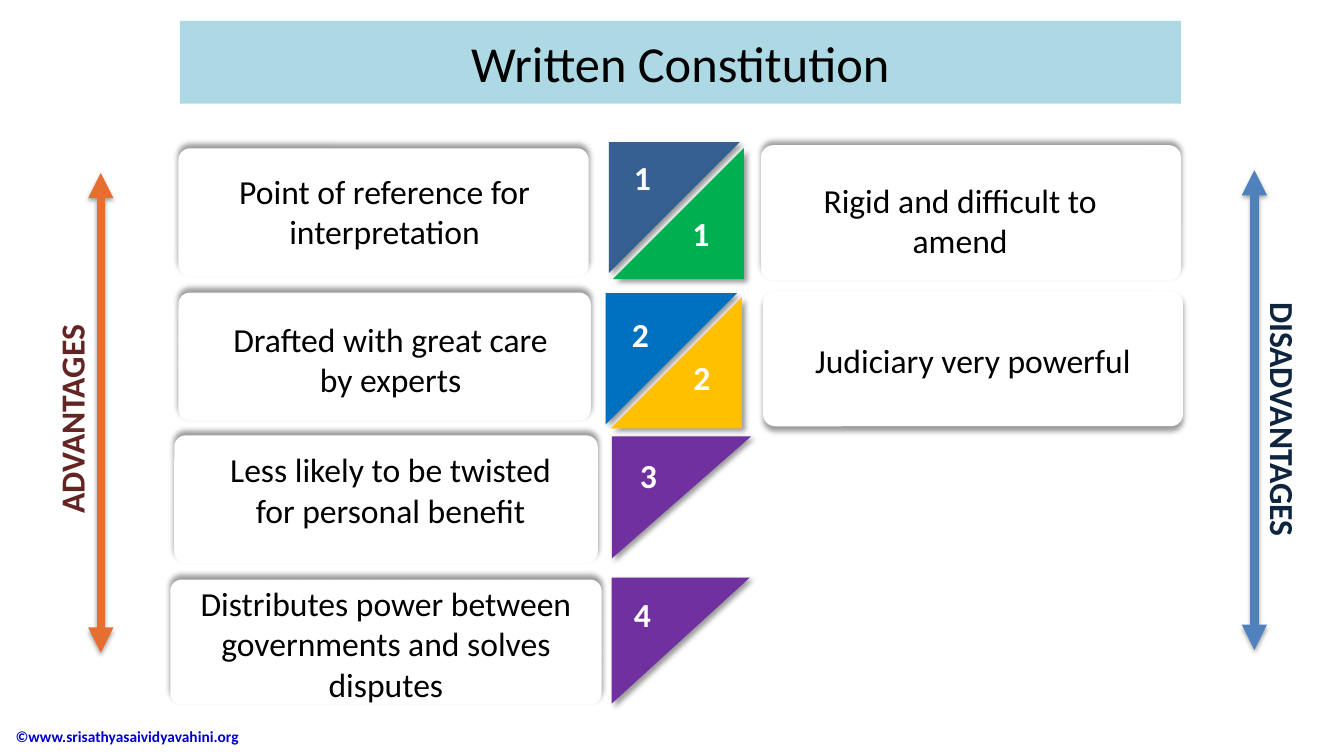
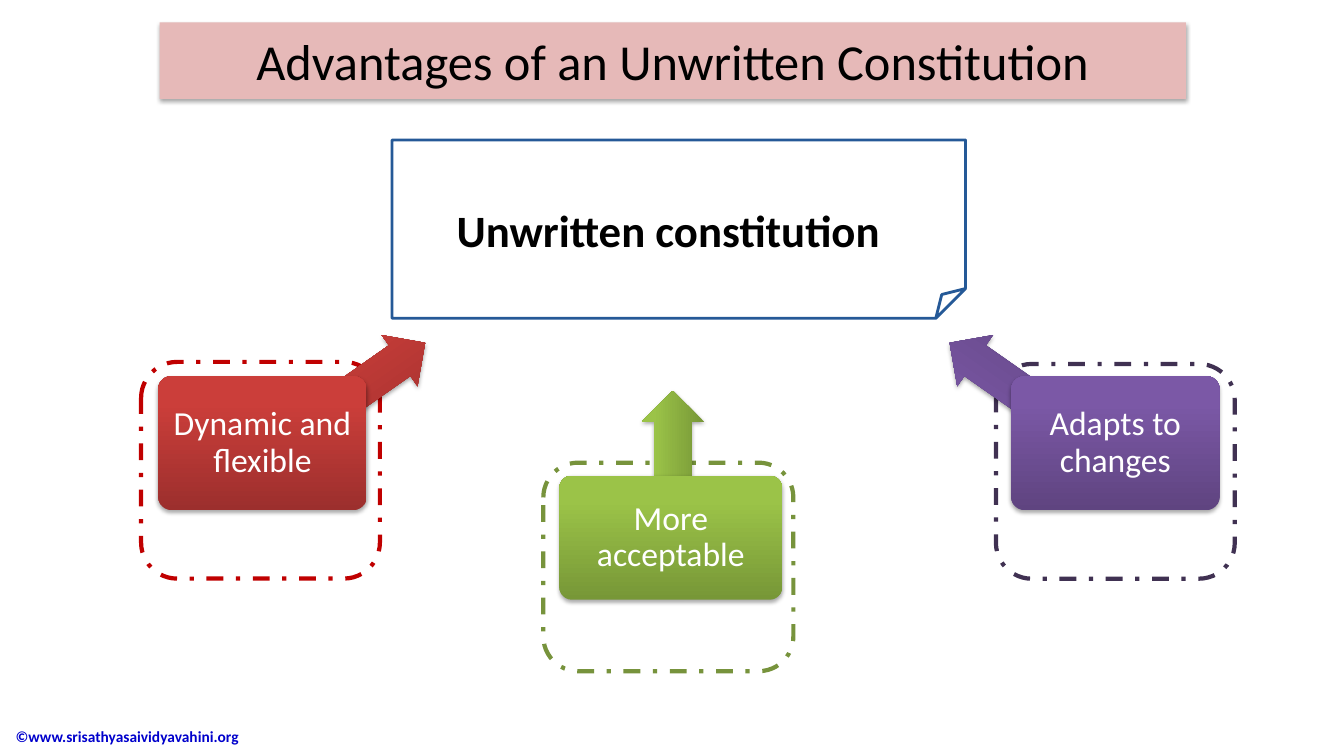
"""Build two slides on written and unwritten constitutions."""
from dataclasses import dataclass
from typing import Any, NamedTuple, Optional

from lxml.etree import SubElement
from pptx import Presentation
from pptx.dml.color import RGBColor
from pptx.enum.dml import MSO_LINE
from pptx.enum.shapes import MSO_CONNECTOR, MSO_SHAPE as Preset
from pptx.enum.text import MSO_ANCHOR as Anchor, PP_ALIGN as Align
from pptx.oxml.ns import qn
from pptx.util import Pt

FONT = "Calibri"
COLORS = {
    "black": "000000", "white": "FFFFFF", "footer": "0000CC",
    "title_blue": "ADD9E5", "title_pink": "E6B9B8",
    "navy": "376092", "green": "00B050", "blue": "0070C0",
    "amber": "FFC000", "purple": "7030A0",
    "advantage_text": "632523", "advantage_arrow": "E76E31",
    "disadvantage_text": "0F243E", "disadvantage_arrow": "4F81BD",
    "note_line": "255997",
    "red_line": "C00000", "red_dark": "9C2F2D", "red_light": "CB3E3A",
    "lime_line": "77933C", "lime_dark": "779737", "lime_light": "9BC348",
    "violet_line": "403152", "violet_dark": "5F4480", "violet_light": "7B58A6",
}


class Box(NamedTuple):
    left: float
    top: float
    width: float
    height: float


class Shadow(NamedTuple):
    alpha: int
    blur: float
    distance: float
    direction: int


SOFT = Shadow(35, 3.1, 1.8, 90)
ABOVE = Shadow(40, 4, 3, 270)
BELOW = Shadow(40, 4, 3, 90)
DIAGONAL = Shadow(40, 4, 3, 45)


@dataclass
class Card:
    box: Box
    text: str
    margins: tuple[float, float, float]
    shadow: Shadow = ABOVE


@dataclass
class Triangle:
    box: Box
    color: str
    flip: str
    number: str
    number_at: tuple[float, float]


@dataclass
class Side:
    text: str
    color: str
    arrow_color: str
    text_left: float
    rotation: int
    arrow_left: float
    arrow_top: float


@dataclass
class Benefit:
    text: str
    hue: str
    frame: Box
    arrow: Box
    rotation: int
    node: Box


CARDS = [
    Card(Box(127.5, 106, 293, 91.5), "Point of reference for interpretation", (20, 13.5, 18.5)),
    Card(Box(127.5, 209, 294.5, 91.5), "Drafted with great care by experts", (23.5, 16.5, 15)),
    Card(Box(124.5, 311, 302.5, 91.5), "Less likely to be twisted for personal benefit", (23, 7.5, 16.5)),
    Card(Box(121.7, 414, 308, 89.3),
         "Distributes power between governments and solves disputes", (7, 0, 7)),
    Card(Box(543.6, 103.7, 300, 96.5), "Rigid and difficult to amend", (11.5, 22, 27)),
    Card(Box(545, 208, 300, 96.5), "Judiciary very powerful", (7, 32, 7), BELOW),
]
TRIANGLES = [
    Triangle(Box(434.9, 101.5, 93.6, 93.6), "navy", "flipV", "1", (445.7, 108.7)),
    Triangle(Box(437.8, 105.8, 93.6, 93.6), "green", "flipH", "1", (487.4, 148.3)),
    Triangle(Box(432.7, 209.5, 93.6, 93.6), "blue", "flipV", "2", (444.2, 220.3)),
    Triangle(Box(436.3, 212.4, 93.6, 93.6), "amber", "flipH", "2", (488.2, 251.3)),
    Triangle(Box(437, 311.8, 99.4, 87.1), "purple", "flipV", "3", (450, 321.1)),
    Triangle(Box(437, 412.6, 98.6, 90), "purple", "flipV", "4", (445.7, 420.5)),
]
SIDES = [
    Side("ADVANTAGES", "advantage_text", "advantage_arrow", -51.1, 270, 72, 123.5),
    Side("DISADVANTAGES", "disadvantage_text", "disadvantage_arrow", 815, 90, 896, 121.5),
]
BENEFITS = [
    Benefit("Dynamic and flexible", "red", Box(100.8, 258.5, 170.6, 154.8),
            Box(194.4, 257, 120.2, 44.6), 145, Box(113, 268.6, 149, 95.8)),
    Benefit("More acceptable", "lime", Box(388.1, 330.5, 178.6, 149),
            Box(420.5, 316.8, 120.2, 44.6), 90, Box(399.6, 339.8, 159.1, 88.6)),
    Benefit("Adapts to changes", "violet", Box(711.4, 260, 170.6, 153.4),
            Box(667.4, 257, 120.2, 44.6), 35, Box(722.2, 268.6, 149, 95.8)),
]


def color_of(name: str) -> RGBColor:
    return RGBColor.from_string(COLORS[name])


def add_shadow(shape: Any, shadow: Shadow) -> None:
    properties = shape._element.spPr
    effects = properties.find(qn("a:effectLst"))
    if effects is None:
        effects = SubElement(properties, qn("a:effectLst"))
    outer = SubElement(effects, qn("a:outerShdw"), blurRad=str(Pt(shadow.blur)),
                       dist=str(Pt(shadow.distance)), dir=str(shadow.direction * 60000),
                       algn="ctr", rotWithShape="0")
    shade = SubElement(outer, qn("a:srgbClr"), val=COLORS["black"])
    SubElement(shade, qn("a:alpha"), val=str(shadow.alpha * 1000))


def write(shape: Any, text: str, size: float, color: str = "black", bold: bool = False,
          align: Align = Align.CENTER, **frame_format: Any) -> None:
    frame = shape.text_frame
    defaults = {"word_wrap": True, "vertical_anchor": Anchor.MIDDLE}
    for name, value in {**defaults, **frame_format}.items():
        setattr(frame, name, value)
    para = frame.paragraphs[0]
    para.alignment = align
    span = para.add_run()
    span.text = text
    for name, value in {"name": FONT, "size": Pt(size), "bold": bold}.items():
        setattr(span.font, name, value)
    span.font.color.rgb = color_of(color)


def add_preset(page: Any, preset: Preset, box: Box, fill: Optional[str] = None,
               shadow: Optional[Shadow] = None, adjust: tuple[float, ...] = (),
               flip: Optional[str] = None) -> Any:
    shape = page.shapes.add_shape(preset, *map(Pt, box))
    shape.shadow.inherit = False
    shape.line.fill.background()
    if fill:
        shape.fill.solid()
        shape.fill.fore_color.rgb = color_of(fill)
    else:
        shape.fill.background()
    for index, value in enumerate(adjust):
        shape.adjustments[index] = value
    if flip:
        shape._element.spPr.find(qn("a:xfrm")).set(flip, "1")
    if shadow:
        add_shadow(shape, shadow)
    return shape


def add_label(page: Any, box: Box, text: str, size: float, color: str,
              align: Align = Align.CENTER) -> Any:
    label = page.shapes.add_textbox(*map(Pt, box))
    write(label, text, size, color, bold=True, align=align)
    return label


def set_outline(shape: Any, color: str, width: float) -> None:
    shape.line.color.rgb = color_of(color)
    shape.line.width = Pt(width)


def set_gradient(shape: Any, hue: str) -> None:
    shape.fill.gradient()
    shape.fill.gradient_angle = 90
    for stop, tone, position in zip(shape.fill.gradient_stops, ("dark", "light"), (0, 0.8)):
        stop.color.rgb = color_of(f"{hue}_{tone}")
        stop.position = position


def add_page(deck: Any, title: str, box: Box, fill: str, shadow: Optional[Shadow] = None) -> Any:
    page = deck.slides.add_slide(deck.slide_layouts[6])
    band = add_preset(page, Preset.RECTANGLE, box, fill, shadow)
    write(band, title, 36)
    add_label(page, Box(4, 511.2, 254, 29.5), "©www.srisathyasaividyavahini.org", 11,
              "footer", Align.LEFT)
    return page


def add_card(page: Any, card: Card) -> None:
    shape = add_preset(page, Preset.ROUNDED_RECTANGLE, card.box, "white", card.shadow, (0.09,))
    left, top, right = map(Pt, card.margins)
    write(shape, card.text, 24, vertical_anchor=Anchor.TOP, margin_left=left,
          margin_top=top, margin_right=right, margin_bottom=0)


def add_triangle(page: Any, triangle: Triangle) -> None:
    add_preset(page, Preset.RIGHT_TRIANGLE, triangle.box, triangle.color, DIAGONAL,
               flip=triangle.flip)
    add_label(page, Box(*triangle.number_at, 27, 36), triangle.number, 24, "white", Align.LEFT)


def add_side(page: Any, side: Side) -> None:
    label = add_label(page, Box(side.text_left, 281.5, 203.8, 36), side.text, 24, side.color)
    label.rotation = side.rotation
    arrow = page.shapes.add_connector(
        MSO_CONNECTOR.STRAIGHT, Pt(side.arrow_left), Pt(side.arrow_top),
        Pt(side.arrow_left), Pt(side.arrow_top + 342.7))
    set_outline(arrow, side.arrow_color, 6)
    line = arrow.line._get_or_add_ln()
    for end in ("a:headEnd", "a:tailEnd"):
        SubElement(line, qn(end), type="triangle")
    add_shadow(arrow, SOFT)


def add_benefit(page: Any, benefit: Benefit) -> None:
    frame = add_preset(page, Preset.ROUNDED_RECTANGLE, benefit.frame)
    set_outline(frame, f"{benefit.hue}_line", 3)
    frame.line.dash_style = MSO_LINE.DASH_DOT
    arrow = add_preset(page, Preset.LEFT_ARROW, benefit.arrow, shadow=SOFT,
                       adjust=(0.6, 0.5), flip="flipV")
    arrow.rotation = benefit.rotation
    node = add_preset(page, Preset.ROUNDED_RECTANGLE, benefit.node, shadow=SOFT, adjust=(0.1,))
    for shape in (arrow, node):
        set_gradient(shape, benefit.hue)
    write(node, benefit.text, 24, "white", margin_left=Pt(5), margin_right=Pt(5))
    node.text_frame.paragraphs[0].line_spacing = 0.9


def build_written(deck: Any) -> None:
    page = add_page(deck, "Written Constitution", Box(128.5, 15, 715, 59), "title_blue")
    for card in CARDS:
        add_card(page, card)
    for triangle in TRIANGLES:
        add_triangle(page, triangle)
    for side in SIDES:
        add_side(page, side)


def build_unwritten(deck: Any) -> None:
    page = add_page(deck, "Advantages of an Unwritten Constitution",
                    Box(114, 16, 733, 54.7), "title_pink", SOFT)
    for benefit in BENEFITS:
        add_benefit(page, benefit)
    note = add_preset(page, Preset.FOLDED_CORNER, Box(280, 100, 409.7, 127.4))
    set_outline(note, "note_line", 2)
    write(note, "Unwritten constitution", 32, bold=True, margin_top=Pt(22),
          margin_bottom=0, margin_right=Pt(22))


def main() -> None:
    deck = Presentation()
    deck.slide_width, deck.slide_height = Pt(960), Pt(540)
    build_written(deck)
    build_unwritten(deck)
    deck.save("out.pptx")


if __name__ == "__main__":
    main()
